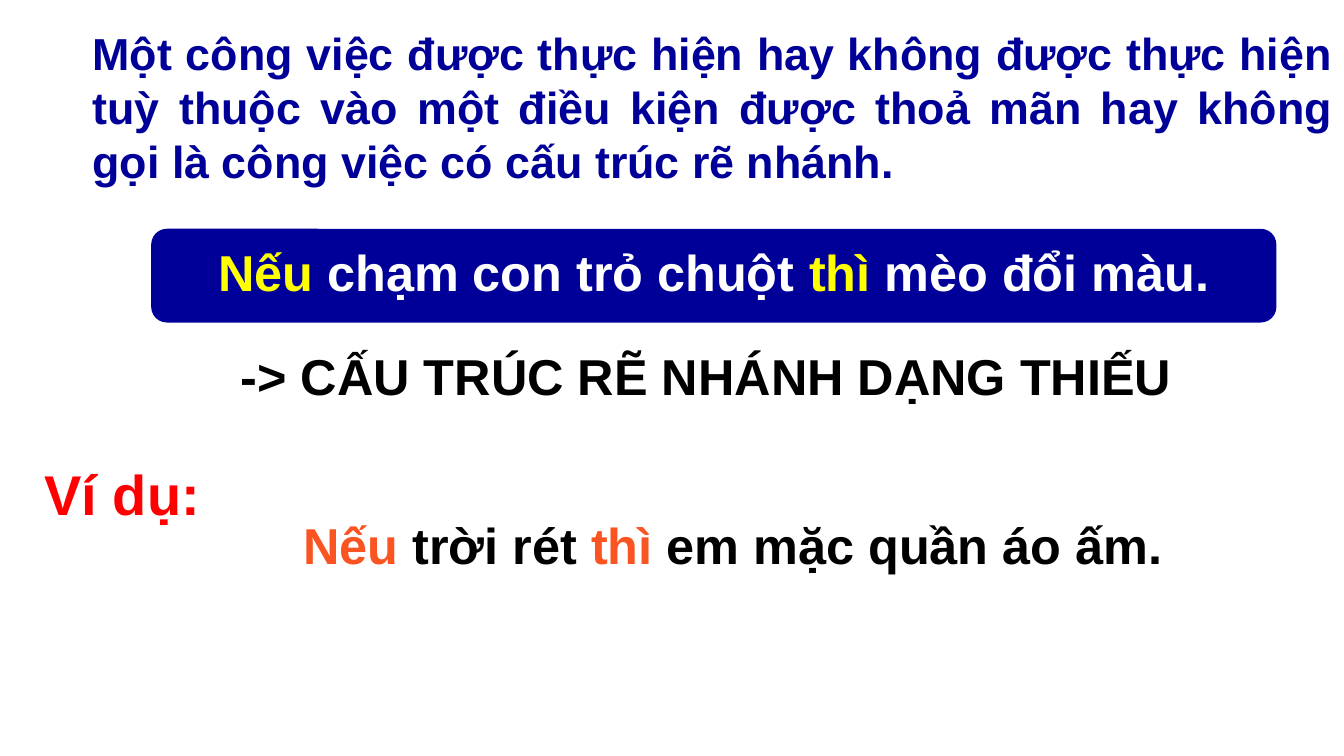
from pptx import Presentation
from pptx.dml.color import RGBColor
from pptx.enum.shapes import MSO_SHAPE as Preset
from pptx.enum.text import MSO_ANCHOR as Anchor, PP_ALIGN as Align
from pptx.util import Inches, Pt

NAVY, YELLOW, ORANGE = "000099", "FFFF00", "F95421"
RED, BLACK, WHITE = "FF0000", "000000", "FFFFFF"


def colour(value):
    return RGBColor.from_string(value)


class BranchingSlide:
    """Holds the text style and the slide, and adds each kind of element."""

    font = "Arial"

    def __init__(self, deck):
        self.slide = deck.slides.add_slide(deck.slide_layouts[6])

    def add_runs(self, frame, runs, size, align):
        frame.word_wrap = True
        paragraph = frame.paragraphs[0]
        paragraph.alignment = align
        for words, ink in runs:
            run = paragraph.add_run()
            run.text = words
            run.font.name = self.font
            run.font.size = Pt(size)
            run.font.bold = True
            run.font.color.rgb = colour(ink)
        return paragraph

    def text(self, box, runs, size=36, align=Align.LEFT):
        frame = self.slide.shapes.add_textbox(*map(Inches, box)).text_frame
        self.add_runs(frame, runs, size, align)

    def panel(self, box, fill, preset=Preset.RECTANGLE):
        panel = self.slide.shapes.add_shape(preset, *map(Inches, box))
        panel.shadow.inherit = False
        panel.fill.solid()
        panel.fill.fore_color.rgb = colour(fill)
        panel.line.fill.background()
        return panel

    def label(self, box, fill, runs, size=36):
        frame = self.panel(box, fill, Preset.ROUNDED_RECTANGLE).text_frame
        frame.margin_left = frame.margin_right = Inches(0.2)
        frame.margin_top = frame.margin_bottom = Inches(0.2)
        frame.vertical_anchor = Anchor.MIDDLE
        self.add_runs(frame, runs, size, Align.CENTER).line_spacing = 0.9


def main():
    deck = Presentation()
    deck.slide_width, deck.slide_height = Inches(13.33), Inches(7.5)
    page = BranchingSlide(deck)

    page.panel((-0.09, -0.04, 13.52, 7.54), WHITE)
    definition = (
        "Một công việc được thực hiện hay không được thực hiện tuỳ thuộc vào "
        "một điều kiện được thoả mãn hay không gọi là công việc có cấu trúc rẽ nhánh."
    )
    page.text((0.82, 0.21, 12.51, 1.72), [(definition, NAVY)], 32, Align.JUSTIFY)
    page.text((2.91, 5.05, 9.3, 0.71), [
        ("Nếu ", ORANGE), ("trời rét ", BLACK),
        ("thì ", ORANGE), ("em mặc quần áo ấm.", BLACK),
    ])
    page.label((1.5, 2.27, 11.16, 0.93), NAVY, [
        ("Nếu", YELLOW), (" chạm con trỏ chuột ", WHITE),
        ("thì", YELLOW), (" mèo đổi màu.", WHITE),
    ])
    page.label((0.04, 4.47, 2.5, 0.93), WHITE, [("Ví dụ: ", RED)], 40)
    page.text((1.5, 3.37, 11.01, 0.71),
              [("-> CẤU TRÚC RẼ NHÁNH DẠNG THIẾU", BLACK)], align=Align.CENTER)

    deck.save("out.pptx")


if __name__ == "__main__":
    main()
